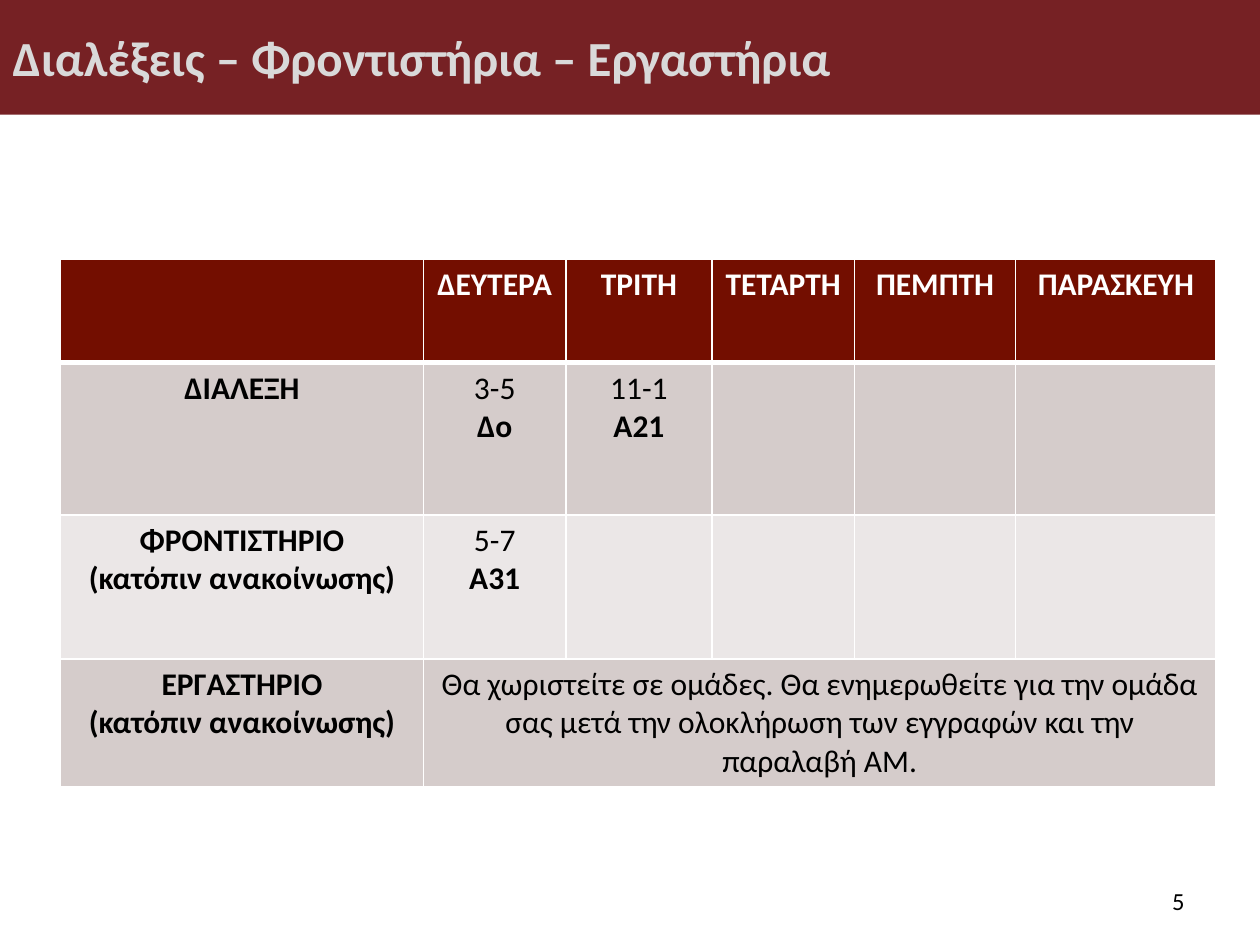
"""Build the weekly timetable slide of lectures, tutorials and labs."""
from dataclasses import dataclass

from lxml.etree import SubElement
from pptx import Presentation
from pptx.dml.color import RGBColor
from pptx.enum.text import MSO_ANCHOR, MSO_AUTO_SIZE, PP_ALIGN
from pptx.oxml.ns import qn
from pptx.slide import Slide
from pptx.table import Table, _Cell
from pptx.text.text import _Run
from pptx.util import Pt

MAROON = RGBColor(0x76, 0x21, 0x24)
DARK_RED = RGBColor(0x73, 0x0E, 0x00)
ROSE = RGBColor(0xD5, 0xCC, 0xCB)
PALE_ROSE = RGBColor(0xEB, 0xE7, 0xE7)
LIGHT_GREY = RGBColor(0xD9, 0xD9, 0xD9)
WHITE = RGBColor(0xFF, 0xFF, 0xFF)
BLACK = RGBColor(0, 0, 0)

DAY_WIDTHS = (207.4, 81.4, 83.5, 81.4, 92.2, 114.5)


@dataclass(frozen=True)
class TimetableRow:
    """A timetable row with its texts from the left, height and colours."""
    texts: tuple[str, ...]
    height: float
    fill: RGBColor
    ink: RGBColor = BLACK
    merged: bool = False


TIMETABLE = (
    TimetableRow(("", "ΔΕΥΤΕΡΑ", "ΤΡΙΤΗ", "ΤΕΤΑΡΤΗ", "ΠΕΜΠΤΗ", "ΠΑΡΑΣΚΕΥΗ"),
                 59, DARK_RED, WHITE),
    TimetableRow(("ΔΙΑΛΕΞΗ", "3-5\vΔο", "11-1\vΑ21"), 87.1, ROSE),
    TimetableRow(("ΦΡΟΝΤΙΣΤΗΡΙΟ\n(κατόπιν ανακοίνωσης)", "5-7\vΑ31"), 82.1, PALE_ROSE),
    TimetableRow(("ΕΡΓΑΣΤΗΡΙΟ\n(κατόπιν ανακοίνωσης)",
                  "Θα χωριστείτε σε ομάδες. Θα ενημερωθείτε για την ομάδα σας "
                  "μετά την ολοκλήρωση των εγγραφών και την παραλαβή ΑΜ."),
                 72.7, ROSE, merged=True),
)


def format_run(run: _Run, size: float, ink: RGBColor, bold: bool) -> None:
    """Give a run its font, size, colour and weight."""
    run.font.name = "Calibri"
    run.font.size = Pt(size)
    run.font.color.rgb = ink
    run.font.bold = bold


def add_borders(cell: _Cell, top: float, bottom: float) -> None:
    """Draw white borders on all four sides of a cell."""
    properties = cell._tc.get_or_add_tcPr()
    for side, width in (("L", 1), ("R", 1), ("T", top), ("B", bottom)):
        border = SubElement(properties, qn(f"a:ln{side}"), w=str(Pt(width)))
        fill = SubElement(border, qn("a:solidFill"))
        SubElement(fill, qn("a:srgbClr"), val=str(WHITE))


def add_title(slide: Slide, heading: str) -> None:
    """Turn the title placeholder into a full-width band."""
    band = slide.shapes.title
    band.left, band.top, band.width, band.height = Pt(0), Pt(0), Pt(720), Pt(65.5)
    band.fill.solid()
    band.fill.fore_color.rgb = MAROON
    frame = band.text_frame
    frame.text = heading
    frame.auto_size = MSO_AUTO_SIZE.NONE
    frame.vertical_anchor = MSO_ANCHOR.MIDDLE
    frame.paragraphs[0].alignment = PP_ALIGN.LEFT
    format_run(frame.paragraphs[0].runs[0], 28, LIGHT_GREY, True)


def fill_row(timetable: Table, index: int, row: TimetableRow) -> None:
    """Write and format one timetable row."""
    timetable.rows[index].height = Pt(row.height)
    for column in range(len(DAY_WIDTHS)):
        cell = timetable.cell(index, column)
        add_borders(cell, 3 if index == 1 else 1, 3 if index == 0 else 1)
        cell.fill.solid()
        cell.fill.fore_color.rgb = row.fill
    for column, text in enumerate(row.texts):
        frame = timetable.cell(index, column).text_frame
        frame.text = text
        for paragraph in frame.paragraphs:
            paragraph.alignment = PP_ALIGN.CENTER
            for line, run in enumerate(paragraph.runs):
                format_run(run, 18, row.ink, index == 0 or column == 0 or line > 0)
    if row.merged:
        timetable.cell(index, 1).merge(timetable.cell(index, len(DAY_WIDTHS) - 1))


def add_timetable(slide: Slide) -> None:
    """Add the weekly timetable."""
    timetable = slide.shapes.add_table(
        len(TIMETABLE), len(DAY_WIDTHS), Pt(34.6), Pt(148.3),
        Pt(sum(DAY_WIDTHS)), Pt(sum(row.height for row in TIMETABLE))).table
    for column, width in zip(timetable.columns, DAY_WIDTHS):
        column.width = Pt(width)
    for index, row in enumerate(TIMETABLE):
        fill_row(timetable, index, row)


def add_page_number(slide: Slide, number: str) -> None:
    """Add the page number at the lower right."""
    frame = slide.shapes.add_textbox(Pt(516.2), Pt(500.4), Pt(167.8), Pt(28.8)).text_frame
    frame.word_wrap = True
    frame.vertical_anchor = MSO_ANCHOR.MIDDLE
    frame.text = number
    frame.paragraphs[0].alignment = PP_ALIGN.RIGHT
    format_run(frame.paragraphs[0].runs[0], 14, BLACK, False)


def main() -> None:
    """Build and save the presentation."""
    presentation = Presentation()
    presentation.slide_width, presentation.slide_height = Pt(720), Pt(540)
    slide = presentation.slides.add_slide(presentation.slide_layouts[5])
    add_title(slide, "Διαλέξεις – Φροντιστήρια – Εργαστήρια")
    add_timetable(slide)
    add_page_number(slide, "5")
    presentation.save("out.pptx")


if __name__ == "__main__":
    main()
